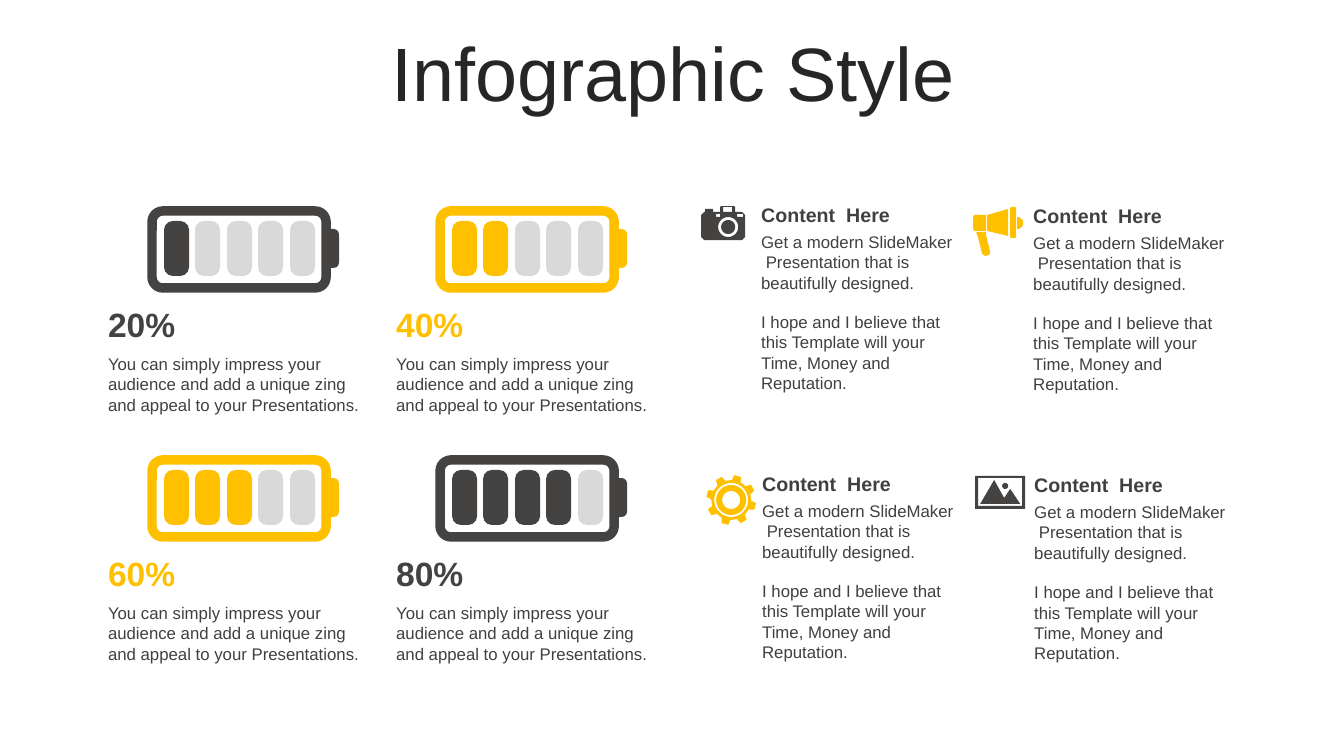
from math import cos, radians, sin

from pptx import Presentation
from pptx.dml.color import RGBColor
from pptx.enum.shapes import MSO_SHAPE as Preset
from pptx.enum.text import MSO_ANCHOR as Anchor, PP_ALIGN as Align
from pptx.util import Inches, Pt

COLORS = {"dark": "444342", "gold": "FFC000", "empty": "D9D9D9",
          "title": "262626", "body": "404040"}
FONT = "Arial"
EMU_PER_PIXEL = Inches(1) / 100.8

TITLE = "Infographic Style"
PITCH = ("You can simply impress your audience and add a unique zing "
         "and appeal to your Presentations.")
BATTERIES = [
    ("20%", 1, "dark", 152, 211),
    ("40%", 2, "gold", 440, 211),
    ("60%", 3, "gold", 152, 460),
    ("80%", 4, "dark", 440, 460),
]
CELL_COUNT = 5
CELL_SPAN = 126

HEADING = "Content  Here"
DETAILS = [
    "Get a modern SlideMaker  Presentation that is beautifully designed.",
    "I hope and I believe that this Template will your Time, Money and Reputation.",
]
CONTENT_SPOTS = [(761, 198), (1033, 199), (762, 467), (1034, 468)]


def px(length):
    """Convert pixels to EMU."""
    return round(length * EMU_PER_PIXEL)


def rgb(color):
    """Look up a named colour."""
    return RGBColor.from_string(COLORS[color])


def arc(cx, cy, radius, start=0, end=360):
    """Return points along a circular arc."""
    return [(cx + radius * cos(radians(a)), cy + radius * sin(radians(a)))
            for a in range(start, end + 1, 10)]


def box(left, top, right, bottom):
    """Return the corners of a rectangle."""
    return [(left, top), (right, top), (right, bottom), (left, bottom)]


def gear_rim(cx, cy, teeth=8, first=-75):
    """Return the toothed outline of a gear."""
    profile = [(-13, 20), (-8, 25), (8, 25), (13, 20)]
    angles = [(first + tooth * 360 / teeth + turn, radius)
              for tooth in range(teeth) for turn, radius in profile]
    return [(cx + r * cos(radians(a)), cy + r * sin(radians(a))) for a, r in angles]


ICONS = [
    ("dark", [
        [(701, 215), (704, 212), (705, 212), (705, 209), (713, 209), (713, 212),
         (720, 212), (720, 207), (721, 206), (734, 206), (735, 207), (735, 212),
         (742, 212), (745, 215), (745, 237), (742, 240), (704, 240), (701, 237)],
        box(723, 207, 732, 212), box(716, 214, 720, 217), box(737, 214, 743, 217),
        arc(728, 227, 10), arc(728, 227, 7)]),
    ("gold", [
        [(976, 232), (986, 232), (986, 236), (990, 252), (989, 255),
         (985, 256), (982, 254), (978, 238)],
        [(974, 215), (986, 215), (986, 231), (974, 231), (973, 229), (973, 217)],
        [(1008, 209), (1008, 236), (987, 231), (987, 215)],
        [(1011, 207), (1015, 207), (1016, 208), (1016, 237), (1015, 238),
         (1011, 238), (1010, 237), (1010, 208)],
        arc(1017, 223, 6, -90, 90)]),
    ("gold", [gear_rim(731, 500), arc(731, 500, 17),
              arc(731, 500, 15), arc(731, 500, 9)]),
    ("dark", [box(975, 476, 1025, 509), box(978, 478, 1022, 506),
              [(994, 480), (1004, 498), (1010, 489), (1020, 504), (980, 504)],
              arc(1005, 486, 3)]),
]


def add_text(area, paragraphs, size, color, bold=False, anchor=Anchor.TOP,
             align=Align.LEFT, left_inset=0, gap=0, spacing=1.0):
    """Add a wrapped text box."""
    frame = slide.shapes.add_textbox(*map(px, area)).text_frame
    frame.word_wrap = True
    frame.vertical_anchor = anchor
    frame.margin_left = px(left_inset)
    for index, words in enumerate(paragraphs):
        paragraph = frame.add_paragraph() if index else frame.paragraphs[0]
        paragraph.alignment = align
        paragraph.line_spacing = spacing
        paragraph.space_before = Pt(gap if index else 0)
        run = paragraph.add_run()
        run.text = words
        run.font.name, run.font.size, run.font.bold = FONT, Pt(size), bold
        run.font.color.rgb = rgb(color)


def add_rounded(area, rounding, color, outline=0):
    """Add a rounded rectangle, either filled or outlined."""
    part = slide.shapes.add_shape(Preset.ROUNDED_RECTANGLE, *map(px, area))
    part.adjustments[0] = rounding
    part.shadow.inherit = False
    if outline:
        part.fill.background()
        part.line.color.rgb = rgb(color)
        part.line.width = Pt(outline)
    else:
        part.fill.solid()
        part.fill.fore_color.rgb = rgb(color)
        part.line.fill.background()


def add_battery(value, charged, color, left, top):
    """Add a battery with its value and pitch."""
    add_rounded((left, top, 174, 77), 0.14, color, 6.75)
    add_rounded((left + 172, top + 18, 15, 39), 0.36, color)
    for cell in range(CELL_COUNT):
        offset = CELL_SPAN * cell // (CELL_COUNT - 1)
        add_rounded((left + 12 + offset, top + 10, 25, 55), 0.35,
                    color if cell < charged else "empty")
    add_text((left - 44, top + 88, 276, 50), [value], 24, color, True, Anchor.MIDDLE)
    add_text((left - 44, top + 138, 276, 72), [PITCH], 12, "body")


def add_icon(color, contours):
    """Add one filled outline made of several contours."""
    outline = None
    for contour in contours:
        first, *rest = [(px(x), px(y)) for x, y in contour]
        if outline is None:
            outline = slide.shapes.build_freeform(*first)
        else:
            outline.move_to(*first)
        outline.add_line_segments(rest, close=True)
    icon = outline.convert_to_shape()
    icon.shadow.inherit = False
    icon.fill.solid()
    icon.fill.fore_color.rgb = rgb(color)
    icon.line.fill.background()


deck = Presentation()
deck.slide_width, deck.slide_height = Inches(13.33), Inches(7.5)
slide = deck.slides.add_slide(deck.slide_layouts[6])

add_text((35, 37, 1276, 80), [TITLE], 54, "title", anchor=Anchor.MIDDLE,
         align=Align.CENTER, left_inset=10, spacing=0.9)
for battery in BATTERIES:
    add_battery(*battery)
for left, top in CONTENT_SPOTS:
    add_text((left, top, 204, 34), [HEADING], 14, "body", True, Anchor.MIDDLE)
    add_text((left, top + 29, 204, 173), DETAILS, 12, "body", gap=14)
for color, contours in ICONS:
    add_icon(color, contours)

deck.save("out.pptx")
